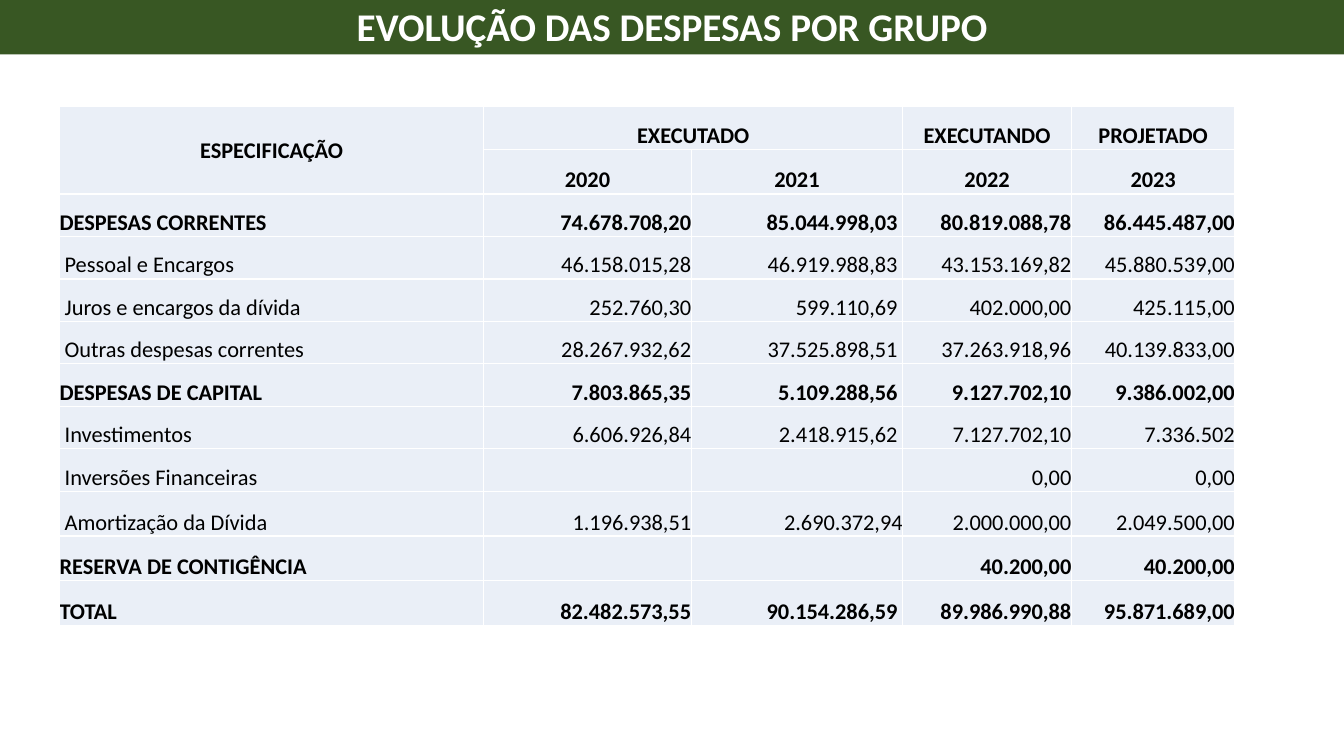
from lxml import etree
from pptx import Presentation
from pptx.dml.color import RGBColor
from pptx.enum.shapes import MSO_SHAPE as Shape
from pptx.enum.text import MSO_ANCHOR as Anchor, PP_ALIGN as Align
from pptx.oxml import parse_xml
from pptx.oxml.ns import nsdecls, qn
from pptx.util import Cm, Pt

COLORS = {"green": "385723", "white": "FFFFFF", "black": "000000", "cell": "EAEFF7"}
INDENT = Cm(0.13)


def write(frame, text, size=16, color="black", bold=False, align=Align.LEFT):
    paragraph = frame.paragraphs[0]
    paragraph.alignment = align
    run = paragraph.add_run()
    run.text = text
    run.font.name = "Calibri"
    run.font.size = Pt(size)
    run.font.bold = bold
    run.font.color.rgb = RGBColor.from_string(COLORS[color])


def style_cell(cell):
    properties = cell._tc.get_or_add_tcPr()
    for side in ("lnL", "lnR", "lnT", "lnB"):
        border = parse_xml(f'<a:{side} {nsdecls("a")} w="{Pt(1)}"/>')
        fill = etree.SubElement(border, qn("a:solidFill"))
        etree.SubElement(fill, qn("a:srgbClr"), val=COLORS["white"])
        properties.append(border)
    cell.fill.solid()
    cell.fill.fore_color.rgb = RGBColor.from_string(COLORS["cell"])
    cell.margin_left = cell.margin_right = cell.margin_top = cell.margin_bottom = 0
    cell.vertical_anchor = Anchor.BOTTOM


presentation = Presentation()
presentation.slide_width = Cm(33.87)
presentation.slide_height = Cm(19.05)
slide = presentation.slides.add_slide(presentation.slide_layouts[6])

# Title band
band = slide.shapes.add_shape(Shape.RECTANGLE, 0, Cm(-0.08), Cm(33.87), Cm(1.45))
band.shadow.inherit = False
band.fill.solid()
band.fill.fore_color.rgb = RGBColor.from_string(COLORS["green"])
band.line.fill.background()
band.text_frame.word_wrap = True
band.text_frame.vertical_anchor = Anchor.MIDDLE
write(band.text_frame, "EVOLUÇÃO DAS DESPESAS POR GRUPO",
      size=28, color="white", bold=True, align=Align.CENTER)

# Table content
HEADERS = [
    ["ESPECIFICAÇÃO", "EXECUTADO", "", "EXECUTANDO", "PROJETADO"],
    ["", "2020", "2021", "2022", "2023"],
]
EXPENSES = [
    ["DESPESAS CORRENTES", "74.678.708,20", "85.044.998,03", "80.819.088,78", "86.445.487,00"],
    ["Pessoal e Encargos", "46.158.015,28", "46.919.988,83", "43.153.169,82", "45.880.539,00"],
    ["Juros e encargos da dívida", "252.760,30", "599.110,69", "402.000,00", "425.115,00"],
    ["Outras despesas correntes", "28.267.932,62", "37.525.898,51", "37.263.918,96", "40.139.833,00"],
    ["DESPESAS DE CAPITAL", "7.803.865,35", "5.109.288,56", "9.127.702,10", "9.386.002,00"],
    ["Investimentos", "6.606.926,84", "2.418.915,62", "7.127.702,10", "7.336.502"],
    ["Inversões Financeiras", "", "", "0,00", "0,00"],
    ["Amortização da Dívida", "1.196.938,51", "2.690.372,94", "2.000.000,00", "2.049.500,00"],
    ["RESERVA DE CONTIGÊNCIA", "", "", "40.200,00", "40.200,00"],
    ["TOTAL", "82.482.573,55", "90.154.286,59", "89.986.990,88", "95.871.689,00"],
]
ROWS = HEADERS + EXPENSES
COLUMN_WIDTHS = [10.69, 5.23, 5.33, 4.25, 4.12]
ROW_HEIGHTS = [1.07, 1.13] + [1.07] * 7 + [1.13] * 3

# Table grid
table = slide.shapes.add_table(
    len(ROWS), len(COLUMN_WIDTHS), Cm(1.5), Cm(2.69),
    Cm(sum(COLUMN_WIDTHS)), Cm(sum(ROW_HEIGHTS))).table
for column, width in zip(table.columns, COLUMN_WIDTHS):
    column.width = Cm(width)
for row, height in zip(table.rows, ROW_HEIGHTS):
    row.height = Cm(height)

# Cells: group rows are in capitals and bold, their items are indented
for row_index, values in enumerate(ROWS):
    is_header = row_index < len(HEADERS)
    is_group = values[0].isupper()
    for column_index, text in enumerate(values):
        cell = table.cell(row_index, column_index)
        style_cell(cell)
        if is_header:
            align = Align.CENTER
        elif column_index == 0:
            align = Align.LEFT
            cell.margin_left = 0 if is_group else INDENT
        else:
            align = Align.RIGHT
            if column_index == 2 and values[0] != "Amortização da Dívida":
                cell.margin_right = INDENT
        if text:
            write(cell.text_frame, text, bold=is_header or is_group, align=align)

# Merged headers
table.cell(0, 0).merge(table.cell(1, 0))
table.cell(0, 0).vertical_anchor = Anchor.MIDDLE
table.cell(0, 1).merge(table.cell(0, 2))

presentation.save("out.pptx")
